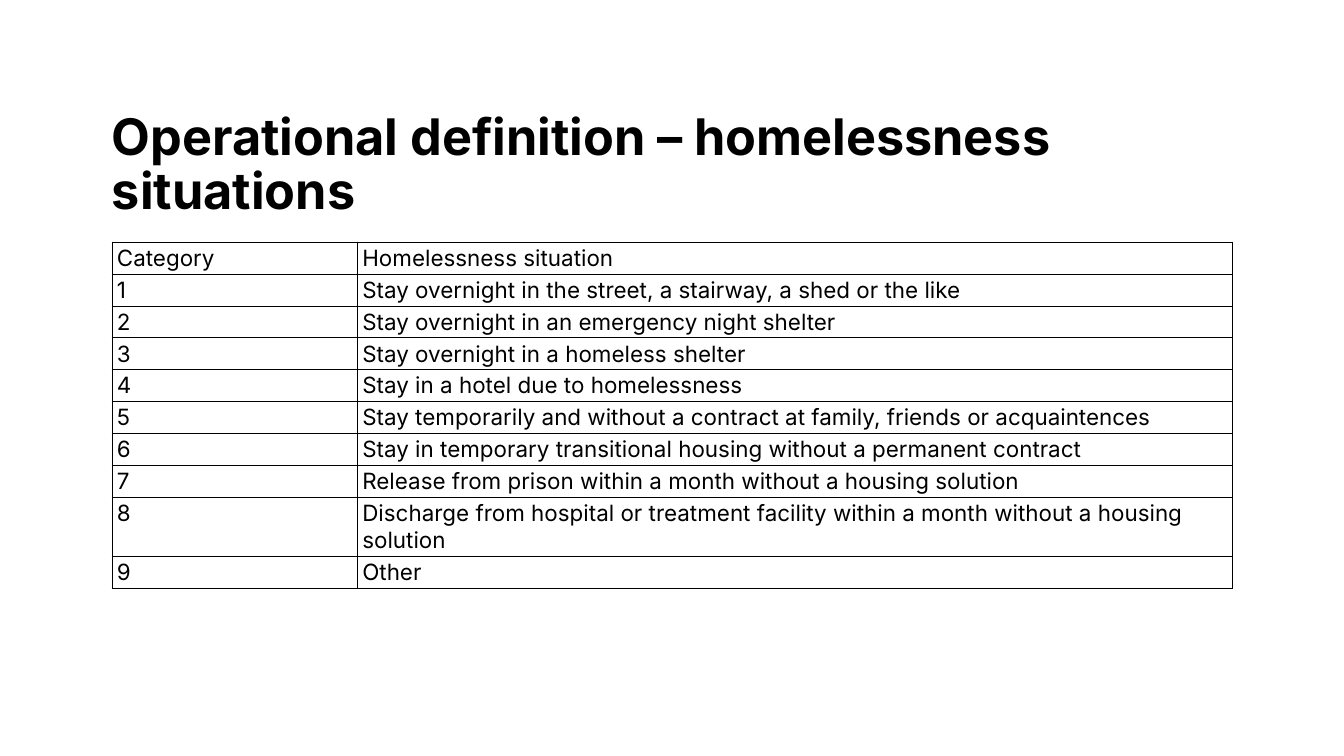
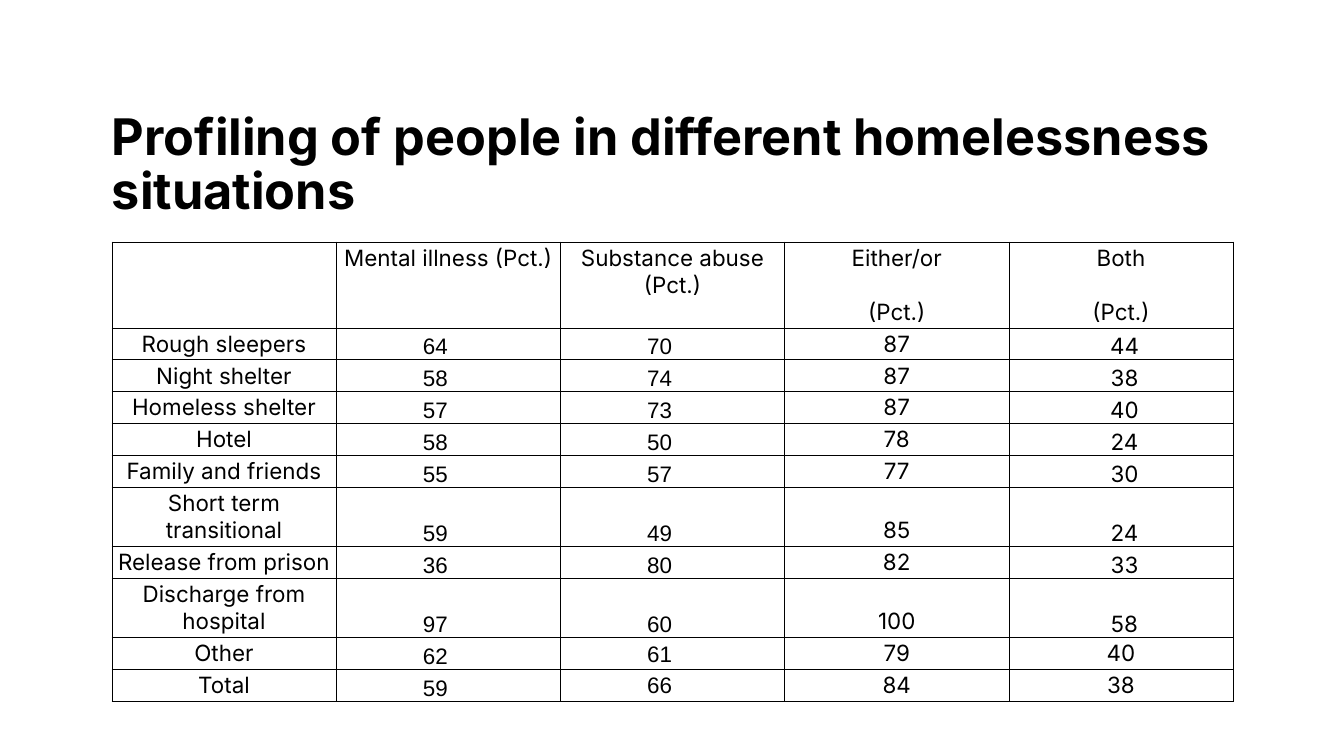
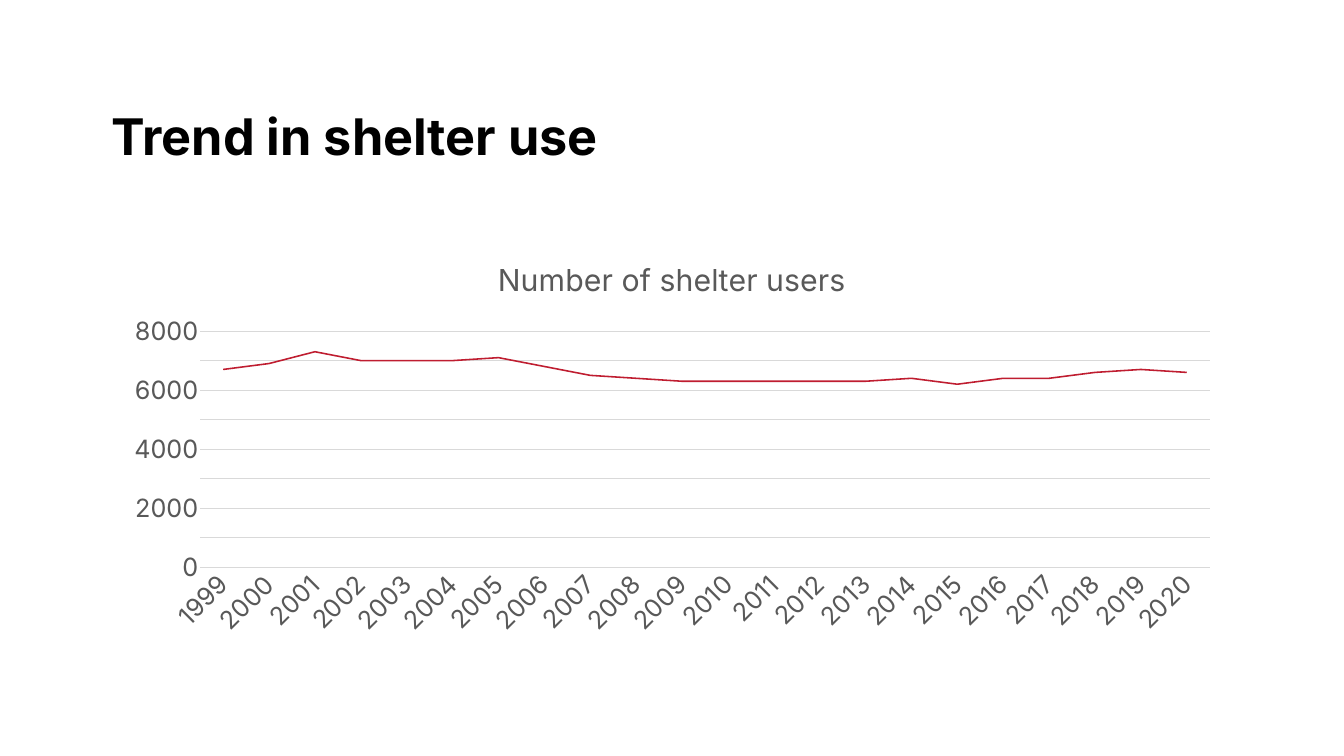
from dataclasses import dataclass

from lxml import etree
from pptx import Presentation
from pptx.chart.data import CategoryChartData
from pptx.dml.color import RGBColor
from pptx.enum.chart import XL_CHART_TYPE, XL_MARKER_STYLE, XL_TICK_MARK
from pptx.enum.text import MSO_ANCHOR, PP_ALIGN
from pptx.oxml.ns import qn
from pptx.util import Inches, Pt


@dataclass(frozen=True)
class Theme:
    font: str = "Inter"
    number_font: str = "Arial"
    black: RGBColor = RGBColor(0x00, 0x00, 0x00)
    grey: RGBColor = RGBColor(0x59, 0x59, 0x59)
    grid: RGBColor = RGBColor(0xD9, 0xD9, 0xD9)
    red: RGBColor = RGBColor(0xBF, 0x1D, 0x30)
    title: float = 72
    chart_title: float = 43.2
    axis: float = 36
    cell: float = 32


T = Theme()
LEFT, TOP, WIDTH = Inches(2.22), Inches(4.8), Inches(22.23)
ROW, DOUBLE_ROW, HEADER_ROW = 0.63, 1.17, 1.7

prs = Presentation()
prs.slide_width, prs.slide_height = Inches(26.67), Inches(15)


def add_titled_slide(title):
    s = prs.slides.add_slide(prs.slide_layouts[6])
    tf = s.shapes.add_textbox(LEFT, Inches(2.22), Inches(22.22), Inches(1.95)).text_frame
    tf.word_wrap = True
    tf.margin_left = tf.margin_top = tf.margin_right = tf.margin_bottom = 0
    p = tf.paragraphs[0]
    p.text = title
    p.line_spacing = 0.9
    p.font.size, p.font.bold, p.font.name = Pt(T.title), True, T.font
    p.font.color.rgb = T.black
    return s


def add_grid(s, rows, col_widths, row_heights, align):
    """Add an unfilled table with thin black borders and return it."""
    height = Inches(sum(row_heights))
    table = s.shapes.add_table(len(rows), len(col_widths), LEFT, TOP, WIDTH, height).table
    table.first_row = table.horz_banding = False
    for col, width in zip(table.columns, col_widths):
        col.width = Inches(width)
    for row, h, texts in zip(table.rows, row_heights, rows):
        row.height = Inches(h)
        for cell, text in zip(row.cells, texts):
            cell.text = text
            for p in cell.text_frame.paragraphs:
                p.alignment = align
                p.font.size, p.font.name = Pt(T.cell), T.font
                p.font.color.rgb = T.black
            tc_pr = cell._tc.get_or_add_tcPr()
            for side in ("lnL", "lnR", "lnT", "lnB"):
                ln = etree.SubElement(tc_pr, qn(f"a:{side}"), w=str(Pt(1)))
                fill = etree.SubElement(ln, qn("a:solidFill"))
                etree.SubElement(fill, qn("a:srgbClr"), val=str(T.black))
            cell.fill.background()
    return table


# Homelessness situations
situations = [
    "Stay overnight in the street, a stairway, a shed or the like",
    "Stay overnight in an emergency night shelter",
    "Stay overnight in a homeless shelter",
    "Stay in a hotel due to homelessness",
    "Stay temporarily and without a contract at family, friends or acquaintences",
    "Stay in temporary transitional housing without a permanent contract",
    "Release from prison within a month without a housing solution",
    "Discharge from hospital or treatment facility within a month without a housing solution",
    "Other",
]
rows = [("Category", "Homelessness situation")]
rows += [(str(n), text) for n, text in enumerate(situations, 1)]
heights = [DOUBLE_ROW if text.startswith("Discharge") else ROW for _, text in rows]
s = add_titled_slide("Operational definition – homelessness situations")
add_grid(s, rows, [4.87, 17.36], heights, PP_ALIGN.LEFT)

# Profiles by situation
profiles = [
    ("Rough sleepers", 64, 70, 87, 44),
    ("Night shelter", 58, 74, 87, 38),
    ("Homeless shelter", 57, 73, 87, 40),
    ("Hotel", 58, 50, 78, 24),
    ("Family and friends", 55, 57, 77, 30),
    ("Short term transitional", 59, 49, 85, 24),
    ("Release from prison", 36, 80, 82, 33),
    ("Discharge from hospital", 97, 60, 100, 58),
    ("Other", 62, 61, 79, 40),
    ("Total", 59, 66, 84, 38),
]
two_line = ("Short term transitional", "Discharge from hospital")
rows = [("", "Mental illness (Pct.)", "Substance abuse\n(Pct.)", "Either/or\n(Pct.)", "Both\n(Pct.)")]
rows += [tuple(map(str, profile)) for profile in profiles]
heights = [HEADER_ROW] + [DOUBLE_ROW if name in two_line else ROW for name, *_ in profiles]
s = add_titled_slide("Profiling of people in different homelessness situations")
table = add_grid(s, rows, [4.45] * 5, heights, PP_ALIGN.CENTER)
for col in (3, 4):
    table.cell(0, col).text_frame.paragraphs[1].space_before = Pt(38.7)
for row, (name, *_) in enumerate(profiles, 1):
    for col in range(1, 5):
        cell = table.cell(row, col)
        cell.vertical_anchor = MSO_ANCHOR.BOTTOM
        p = cell.text_frame.paragraphs[0]
        summary = name in ("Other", "Total")
        if col == 1 or (col in (2, 4) and not summary):
            cell.margin_left, cell.margin_top = 0, Inches(0.04)
            cell.margin_right, cell.margin_bottom = Inches(0.01), 0
            p.space_after = Pt(2)
        if col < 3:
            p.font.name = T.number_font
            cell.margin_right = cell.margin_left + Inches(0.51)
        elif col == 4 and not summary:
            cell.margin_left = Inches(0.15)

# Shelter use
users = [6700, 6900, 7300, 7000, 7000, 7000, 7100, 6800, 6500, 6400, 6300,
         6300, 6300, 6300, 6300, 6400, 6200, 6400, 6400, 6600, 6700, 6600]
data = CategoryChartData()
data.categories = [str(1999 + i) for i in range(len(users))]
data.add_series("Number of shelter users", users)
s = add_titled_slide("Trend in shelter use")
chart = s.shapes.add_chart(XL_CHART_TYPE.LINE, LEFT, TOP, WIDTH, Inches(7.98), data).chart
chart.has_legend = False
chart.font.size, chart.font.name = Pt(T.axis), T.font
chart.font.color.rgb = T.black

chart.has_title = True
chart.chart_title.include_in_layout = False
p = chart.chart_title.text_frame.paragraphs[0]
p.text = "Number of shelter users"
p.font.size, p.font.name, p.font.bold = Pt(T.chart_title), T.font, False
p.font.color.rgb = T.grey

years, counts = chart.category_axis, chart.value_axis
for axis in (years, counts):
    axis.major_tick_mark = axis.minor_tick_mark = XL_TICK_MARK.NONE
    font = axis.tick_labels.font
    font.size, font.name = Pt(T.axis), T.font
    font.color.rgb = T.grey
years._element.find(qn("c:txPr")).find(qn("a:bodyPr")).set("rot", "-2700000")
counts.minimum_scale = 0
counts.has_major_gridlines = True
counts.format.line.fill.background()
for line in (years.format.line, counts.major_gridlines.format.line):
    line.width = Pt(0.75)
    line.color.rgb = T.grid

plot = chart.plots[0]
plot.vary_by_categories = False
series = plot.series[0]
series.smooth = False
series.marker.style = XL_MARKER_STYLE.NONE
series.format.line.width = Pt(2.25)
series.format.line.color.rgb = T.red

prs.save("out.pptx")
